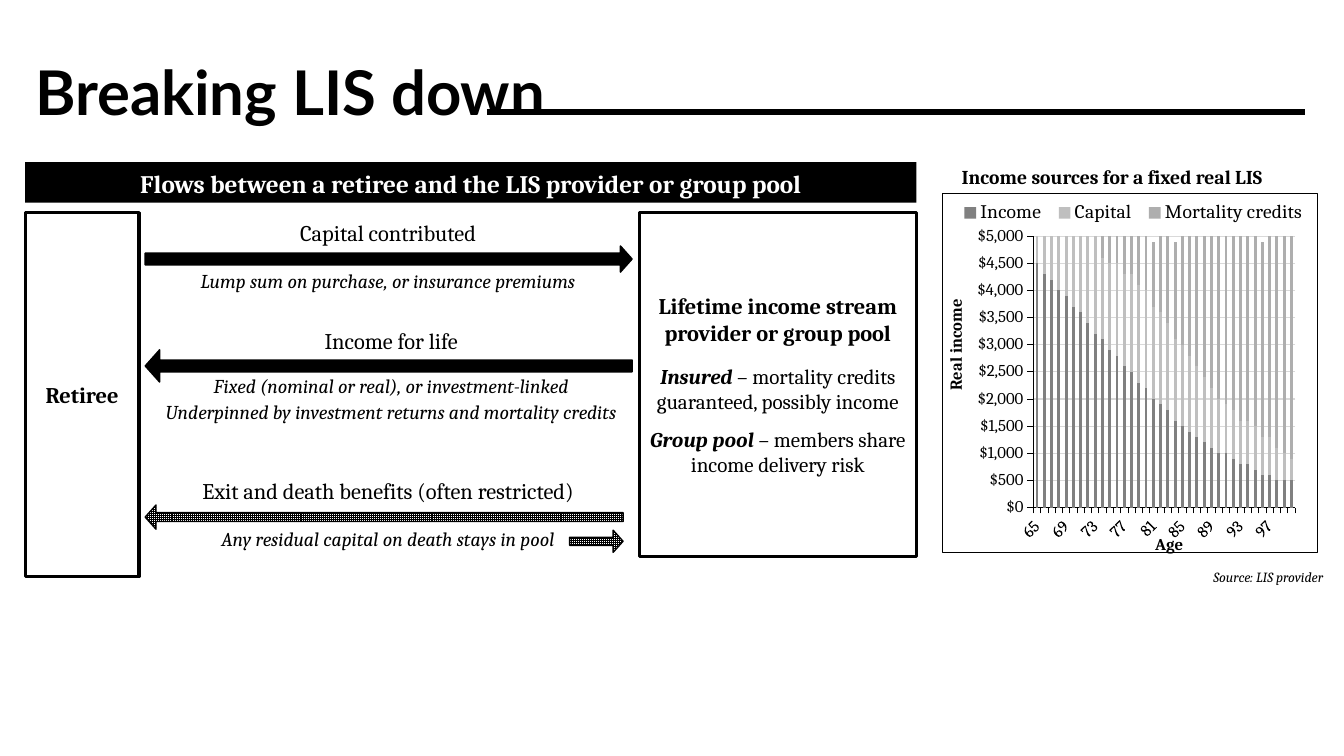
from pptx import Presentation
from pptx.chart.data import CategoryChartData
from pptx.dml.color import RGBColor
from pptx.enum.chart import XL_CHART_TYPE, XL_LEGEND_POSITION, XL_TICK_LABEL_POSITION, XL_TICK_MARK
from pptx.enum.dml import MSO_PATTERN
from pptx.enum.shapes import MSO_CONNECTOR, MSO_SHAPE
from pptx.enum.text import MSO_ANCHOR, PP_ALIGN
from pptx.oxml import parse_xml
from pptx.oxml.ns import nsdecls, qn
from pptx.util import Inches, Pt
from lxml import etree

BLACK, WHITE = "000000", "FFFFFF"
CENTER, LEFT, RIGHT = PP_ALIGN.CENTER, PP_ALIGN.LEFT, PP_ALIGN.RIGHT
rgb = RGBColor.from_string

prs = Presentation()
prs.slide_width, prs.slide_height = Inches(13.33), Inches(7.5)
s = prs.slides.add_slide(prs.slide_layouts[6])


def write(sp, paragraphs, align=CENTER, middle=False, inset=None, font="Cambria", color=BLACK):
    """Each paragraph: (space before, space after, line spacing, [(text, size, style), ...])."""
    tf = sp.text_frame
    tf.word_wrap = True
    tf.vertical_anchor = MSO_ANCHOR.MIDDLE if middle else MSO_ANCHOR.TOP
    if inset is not None:
        tf.margin_left = tf.margin_right = tf.margin_top = tf.margin_bottom = Inches(inset)
    for i, (before, after, spacing, runs) in enumerate(paragraphs):
        p = tf.add_paragraph() if i else tf.paragraphs[0]
        p.alignment, p.line_spacing = align, spacing
        p.space_before, p.space_after = Pt(before), Pt(after)
        for text, size, style in runs:
            r = p.add_run()
            r.text = text
            r.font.name, r.font.size = font, Pt(size)
            r.font.bold, r.font.italic = "b" in style, "i" in style
            r.font.color.rgb = rgb(color)


def shape(kind, box, fill, line_width=None):
    sp = s.shapes.add_shape(kind, *map(Inches, box))
    sp.shadow.inherit = False
    if fill == "grid":
        sp.fill.patterned()
        sp.fill.pattern = MSO_PATTERN.SMALL_GRID
        sp.fill.fore_color.rgb, sp.fill.back_color.rgb = rgb(BLACK), rgb(WHITE)
    else:
        sp.fill.solid()
        sp.fill.fore_color.rgb = rgb(fill)
    if line_width:
        sp.line.color.rgb, sp.line.width = rgb(BLACK), Pt(line_width)
    else:
        sp.line.fill.background()
    return sp


# Title and rule
title = s.shapes.add_textbox(Inches(0.25), Inches(0.34), Inches(11.61), Inches(1.22))
write(title, [(0, 0, 0.9, [("Breaking LIS down", 44, "b")])], LEFT, True, font="Lato")
rule = s.shapes.add_connector(MSO_CONNECTOR.STRAIGHT, Inches(4.83), Inches(1.11), Inches(12.94), Inches(1.11))
rule.line.color.rgb, rule.line.width = rgb(BLACK), Pt(4.5)
etree.SubElement(rule.element.spPr, qn("a:effectLst"))

# Headings and source
header = shape(MSO_SHAPE.RECTANGLE, (0.25, 1.61, 8.84, 0.4), BLACK)
write(header, [(0, 2, 1.05, [("Flows between a retiree and the LIS provider or group pool", 18, "b")])], color=WHITE)
chart_heading = s.shapes.add_textbox(Inches(9.34), Inches(1.57), Inches(3.38), Inches(0.33))
write(chart_heading, [(0, 2, 1.07, [("Income sources for a fixed real LIS", 14, "b")])])
source = s.shapes.add_textbox(Inches(9.62), Inches(5.59), Inches(3.6), Inches(0.27))
write(source, [(0, 0, 1.0, [("Source: LIS provider", 10, "i")])], RIGHT)

# Income chart
cd = CategoryChartData()
cd.categories = [str(age) for age in range(65, 101)]
income = [4500, 4300, 4200, 4000, 3900, 3700, 3600, 3400, 3200, 3100, 2900, 2800,
          2600, 2500, 2300, 2200, 2000, 1900, 1800, 1600, 1500, 1400, 1300, 1200,
          1100, 1000, 1000, 900, 800, 800, 700, 600, 600, 500, 500, 500]
capital = [600, 700, 800, 1000, 1100, 1300, 1500, 1600, 1800, 1500, 1600, 1700,
           1700, 1800, 1800, 1800, 1700, 1700, 1600, 1500, 1500, 1400, 1300, 1200,
           1100, 1000, 900, 900, 800, 800, 800, 700, 700, 600, 500, 400]
credits = [0] * 9 + [500, 500, 600, 700, 800, 900, 1100, 1200, 1400, 1700, 1800, 2000, 2200, 2400,
                     2600, 2800, 3000, 3100, 3300, 3400, 3500, 3600, 3600, 3700, 3900, 4000, 4200]
for name, values in (("Income", income), ("Capital", capital), ("Mortality credits", credits)):
    cd.add_series(name, values)
chart = s.shapes.add_chart(XL_CHART_TYPE.COLUMN_STACKED, Inches(9.34), Inches(1.91),
                           Inches(3.73), Inches(3.64), cd).chart
chart.has_title = False
chart.font.name, chart.font.size, chart.font.color.rgb = "Cambria", Pt(10), rgb(BLACK)
plot = chart.plots[0]
plot.gap_width, plot.overlap, plot.vary_by_categories = 150, 100, False
for series, color in zip(plot.series, ("808080", "BFBFBF", "AEAEAE")):
    series.format.fill.solid()
    series.format.fill.fore_color.rgb = rgb(color)

chart.has_legend = True
legend = chart.legend
legend.position, legend.include_in_layout = XL_LEGEND_POSITION.BOTTOM, False
legend.font.name, legend.font.size, legend.font.color.rgb = "Cambria", Pt(14), rgb(BLACK)

# Chart axes
ages, dollars = chart.category_axis, chart.value_axis
for axis, label in ((ages, "Age"), (dollars, "Real income")):
    axis.major_tick_mark, axis.minor_tick_mark = XL_TICK_MARK.OUTSIDE, XL_TICK_MARK.NONE
    axis.format.line.color.rgb, axis.format.line.width = rgb(BLACK), Pt(0.5)
    font = axis.tick_labels.font
    font.name, font.size, font.color.rgb = "Cambria", Pt(12), rgb(BLACK)
    r = axis.axis_title.text_frame.paragraphs[0].add_run()
    r.text = label
    r.font.name, r.font.size, r.font.bold, r.font.color.rgb = "Cambria", Pt(12), True, rgb(BLACK)
ages.tick_label_position = XL_TICK_LABEL_POSITION.LOW
ages._element.find(qn("c:txPr")).find(qn("a:bodyPr")).set("rot", "-2700000")
skip = parse_xml(f'<c:tickLblSkip {nsdecls("c")} val="4"/>')
ages._element.find(qn("c:noMultiLvlLbl")).addprevious(skip)
dollars.minimum_scale, dollars.maximum_scale, dollars.major_unit = 0, 5000, 500
dollars.tick_labels.number_format = '"$"#,##0'
dollars.tick_labels.number_format_is_linked = False
grid = dollars.major_gridlines.format.line
grid.color.rgb, grid.width = rgb("D9D9D9"), Pt(0.75)

# Chart layout and frame
plot_area = chart._chartSpace.chart.plotArea
for old in plot_area.findall(qn("c:layout")):
    plot_area.remove(old)
plot_area.insert(0, parse_xml(
    f'<c:layout {nsdecls("c")}><c:manualLayout><c:layoutTarget val="inner"/>'
    '<c:xMode val="edge"/><c:yMode val="edge"/><c:x val="0.243"/><c:y val="0.12"/>'
    '<c:w val="0.698"/><c:h val="0.755"/></c:manualLayout></c:layout>'))
for part, previous, x, y, size in (
    (ages.axis_title._element, "c:tx", 0.56, 0.94, ""),
    (dollars.axis_title._element, "c:tx", 0, 0.29, ""),
    (legend._element, "c:legendPos", 0.03, 0.01, '<c:w val="0.96"/><c:h val="0.09"/>'),
):
    for old in part.findall(qn("c:layout")):
        part.remove(old)
    part.find(qn(previous)).addnext(parse_xml(
        f'<c:layout {nsdecls("c")}><c:manualLayout><c:xMode val="edge"/><c:yMode val="edge"/>'
        f'<c:x val="{x}"/><c:y val="{y}"/>{size}</c:manualLayout></c:layout>'))
chart._chartSpace.chart.addnext(parse_xml(
    f'<c:spPr {nsdecls("c", "a")}><a:solidFill><a:srgbClr val="{WHITE}"/></a:solidFill>'
    f'<a:ln w="9525"><a:solidFill><a:srgbClr val="{BLACK}"/></a:solidFill></a:ln></c:spPr>'))

# Retiree and provider boxes
retiree = shape(MSO_SHAPE.RECTANGLE, (0.25, 2.11, 1.13, 3.61), WHITE, 2.25)
write(retiree, [(0, 6, 1.0, [("Retiree", 16, "b")])], middle=True, inset=0.04)
provider = shape(MSO_SHAPE.RECTANGLE, (6.34, 2.11, 2.75, 3.41), WHITE, 2.25)
write(provider, [
    (0, 6, 1.0, [("Lifetime income stream provider or group pool", 16, "b")]),
    (6, 3, 1.0, [("Insured", 15, "bi"), (" – mortality credits guaranteed, possibly income", 15, "")]),
    (6, 3, 1.0, [("Group pool ", 15, "bi"), ("– members share income delivery risk", 15, "")]),
], middle=True, inset=0.04)

# Flow arrows: box, rotation, shaft share, fill
for box, rotation, shaft, fill in (
    ((1.44, 2.44, 4.83, 0.26), 0, 0.445, BLACK),
    ((1.44, 3.47, 4.83, 0.32), 180, 0.364, BLACK),
    ((1.44, 5.01, 4.74, 0.24), 180, 0.364, "grid"),
    ((5.65, 5.26, 0.53, 0.22), 0, 0.364, "grid"),
):
    arrow = shape(MSO_SHAPE.RIGHT_ARROW, box, fill, 1)
    arrow.rotation = rotation
    arrow.adjustments[0], arrow.adjustments[1] = shaft, 0.446

# Flow labels: box, gap below the name, gap above details, name, details
for box, after, before, name, details in (
    ((1.37, 2.16, 4.96, 0.76), 14, 2, "Capital contributed", ["Lump sum on purchase, or insurance premiums"]),
    ((1.42, 3.04, 4.92, 1.37), 14, 0, "Income for life",
     ["Fixed (nominal or real), or investment-linked", "Underpinned by investment returns and mortality credits"]),
    ((1.37, 4.67, 4.96, 0.85), 15, 1, "Exit and death benefits (often restricted)",
     ["Any residual capital on death stays in pool"]),
):
    label = s.shapes.add_textbox(*map(Inches, box))
    lines = [(0, after, 1.0, [(name, 16, "")])]
    lines += [(2 if i else before, 0, 1.0, [(text, 14, "i")]) for i, text in enumerate(details)]
    write(label, lines, middle=True, inset=0.04)

prs.save("out.pptx")
